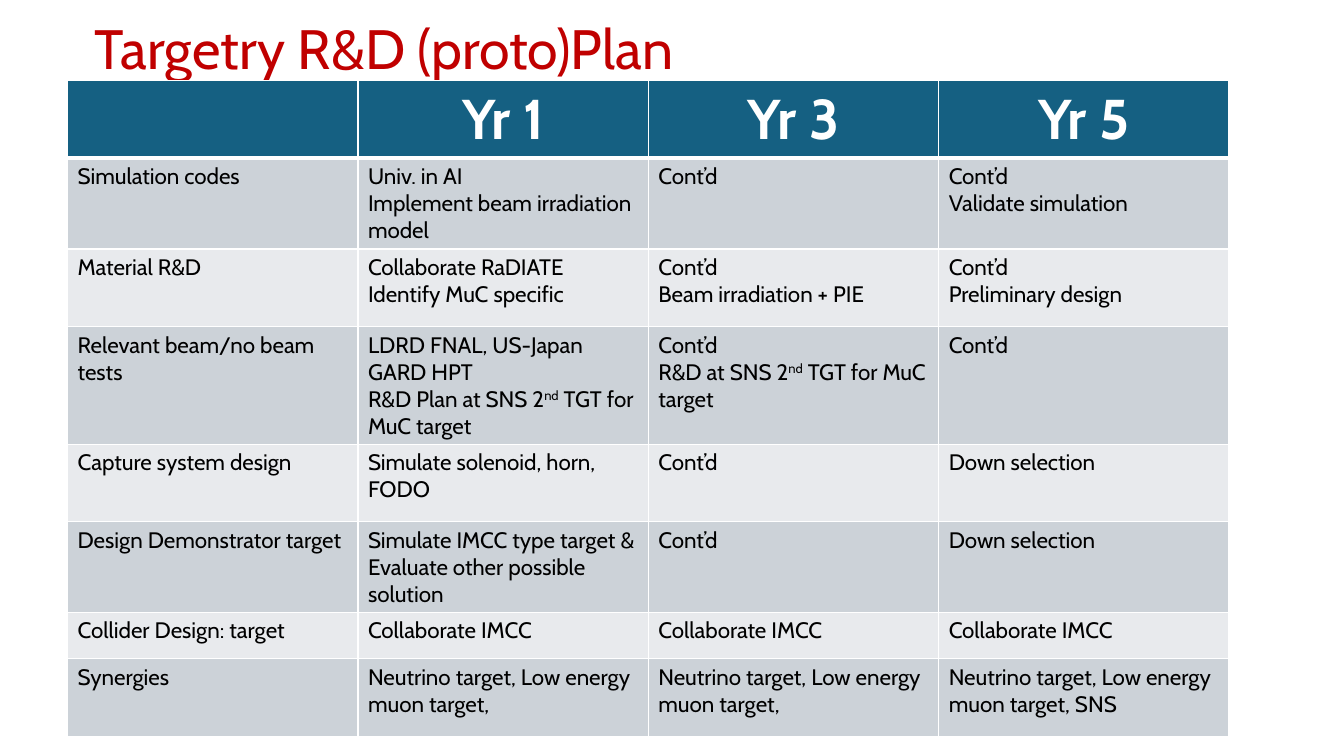
from lxml import etree
from pptx import Presentation
from pptx.dml.color import RGBColor
from pptx.enum.text import MSO_ANCHOR, PP_ALIGN
from pptx.oxml.ns import qn
from pptx.util import Inches, Pt

MIDDLE, TOP = MSO_ANCHOR.MIDDLE, MSO_ANCHOR.TOP
LEFT, CENTER = PP_ALIGN.LEFT, PP_ALIGN.CENTER
FONT = "Cabin"
RED, BLUE, WHITE, BLACK = "C00000", "156082", "FFFFFF", "000000"
BANDS = ["E8EAED", "CCD2D8"]
COL_WIDTH = 2.88
HEIGHTS = [0.77, 0.86, 0.77, 0.86, 0.77, 0.77, 0.46, 0.77]
PLAN = [
    ["", "Yr 1", "Yr 3", "Yr 5"],
    ["Simulation codes", "Univ. in AI\nImplement beam irradiation model",
     "Cont’d", "Cont’d\nValidate simulation"],
    ["Material R&D", "Collaborate RaDIATE\nIdentify MuC specific",
     "Cont’d\nBeam irradiation + PIE", "Cont’d\nPreliminary design"],
    ["Relevant beam/no beam tests",
     "LDRD FNAL, US-Japan\nGARD HPT\nR&D Plan at SNS 2^nd^ TGT for MuC target",
     "Cont’d\nR&D at SNS 2^nd^ TGT for MuC target", "Cont’d"],
    ["Capture system design", "Simulate solenoid, horn, FODO", "Cont’d", "Down selection"],
    ["Design Demonstrator target",
     "Simulate IMCC type target & Evaluate other possible solution",
     "Cont’d", "Down selection"],
    ["Collider Design: target"] + ["Collaborate IMCC"] * 3,
    ["Synergies"] + ["Neutrino target, Low energy muon target,"] * 2
    + ["Neutrino target, Low energy muon target, SNS"],
]


def color(code):
    """Turn a hex string into a colour."""
    return RGBColor.from_string(code)


def write(frame, text, size, shade, bold=False, align=LEFT):
    """Fill a frame with one paragraph a line; carets enclose superscripts."""
    for i, line in enumerate(text.split("\n")):
        para = frame.add_paragraph() if i else frame.paragraphs[0]
        para.alignment = align
        font = para.font
        font.name, font.size, font.bold = FONT, Pt(size), bold
        font.color.rgb = color(shade)
        for j, part in enumerate(line.split("^")):
            if not part:
                continue
            run = para.add_run()
            run.text = part
            run.font.name, run.font.size, run.font.bold = FONT, Pt(size), bold
            run.font.color.rgb = color(shade)
            if j % 2:
                run._r.get_or_add_rPr().set("baseline", "30000")


def border(cell, top, bottom):
    """Draw white edges around a cell."""
    props = cell._tc.get_or_add_tcPr()
    for side, width in (("L", 1), ("R", 1), ("T", top), ("B", bottom)):
        edge = etree.SubElement(props, qn(f"a:ln{side}"), w=str(Pt(width)))
        fill = etree.SubElement(edge, qn("a:solidFill"))
        etree.SubElement(fill, qn("a:srgbClr"), val=WHITE)


def add_title(slide, text):
    """Add the slide heading."""
    box = slide.shapes.add_textbox(Inches(0.84), Inches(0.15), Inches(11.5), Inches(0.73))
    frame = box.text_frame
    frame.word_wrap = True
    frame.vertical_anchor = MIDDLE
    write(frame, text, 39.6, RED)
    frame.paragraphs[0].line_spacing = 0.9


def add_plan(slide, rows):
    """Add the table of work by year."""
    count = len(rows[0])
    table = slide.shapes.add_table(
        len(rows), count, Inches(0.67), Inches(0.8),
        Inches(COL_WIDTH * count), Inches(sum(HEIGHTS))).table
    for col in table.columns:
        col.width = Inches(COL_WIDTH)
    for r, row in enumerate(rows):
        table.rows[r].height = Inches(HEIGHTS[r])
        head = r == 0
        for c, text in enumerate(row):
            cell = table.cell(r, c)
            border(cell, 3 if r == 1 else 1, 3 if head else 1)
            cell.fill.solid()
            cell.fill.fore_color.rgb = color(BLUE if head else BANDS[r % 2])
            cell.vertical_anchor = MIDDLE if head else TOP
            if head and text:
                write(cell.text_frame, text, 40, WHITE, True, CENTER)
            elif text:
                write(cell.text_frame, text, 16, BLACK)


def main():
    """Build and save the slide."""
    deck = Presentation()
    deck.slide_width, deck.slide_height = Inches(13.33), Inches(7.5)
    slide = deck.slides.add_slide(deck.slide_layouts[6])
    add_title(slide, "Targetry R&D (proto)Plan")
    add_plan(slide, PLAN)
    deck.save("out.pptx")


if __name__ == "__main__":
    main()
